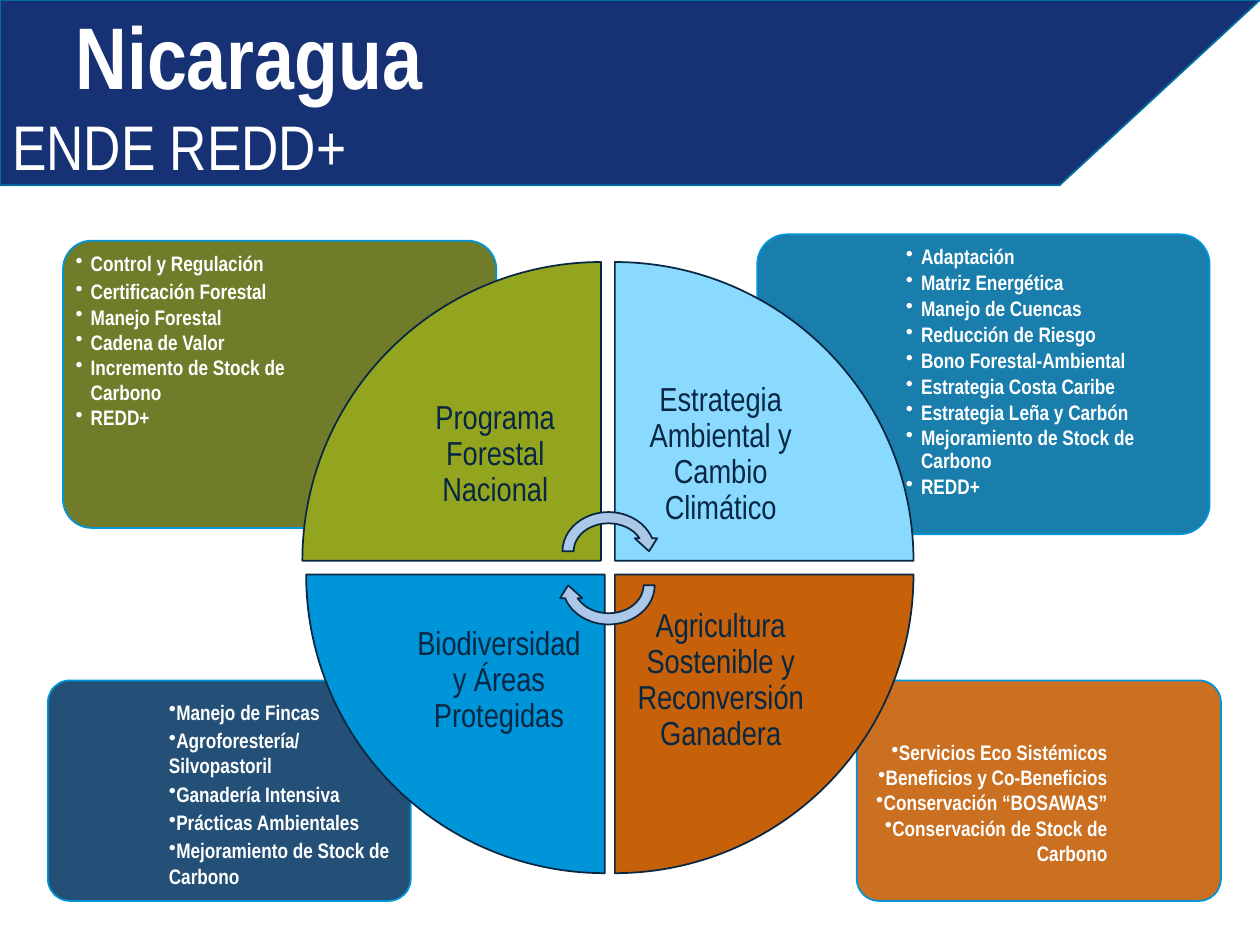
from lxml import etree
from pptx import Presentation
from pptx.dml.color import RGBColor
from pptx.enum.shapes import MSO_SHAPE
from pptx.enum.text import MSO_ANCHOR, PP_ALIGN
from pptx.oxml.ns import qn
from pptx.util import Inches, Pt

ROUND, WEDGE = MSO_SHAPE.ROUNDED_RECTANGLE, MSO_SHAPE.PIE_WEDGE
ARROW = MSO_SHAPE.CIRCULAR_ARROW
TOP, MIDDLE, BOTTOM = MSO_ANCHOR.TOP, MSO_ANCHOR.MIDDLE, MSO_ANCHOR.BOTTOM
LEFT, CENTER, RIGHT = PP_ALIGN.LEFT, PP_ALIGN.CENTER, PP_ALIGN.RIGHT

FONT = "Arial Narrow"
WHITE, NAVY, SKY = "FFFFFF", "082742", "0095D9"
SIDE = 2.37   # wedge side
LABEL = 1.68  # wedge label side

# Panel box, fill, text box, inset, anchor, alignment, hanging indent,
# line spacing of the first and of the other items, space after both, items
PANELS = [
    ((0.38, 5.4, 2.88, 1.75), "0D3E69", (1.29, 5.87, 1.94, 1.23),
     0.05, BOTTOM, LEFT, 0, (1, 1), (1.8, 1.8),
     ["Manejo de Fincas", "Agroforestería/ Silvopastoril",
      "Ganadería Intensiva", "Prácticas Ambientales",
      "Mejoramiento de Stock de Carbono"]),
    ((6.8, 5.4, 2.89, 1.75), "C66009", (6.84, 5.87, 1.95, 1.24),
     0, TOP, RIGHT, 0, (1, 1), (0, 0),
     ["Servicios Eco Sistémicos", "Beneficios y Co-Beneficios",
      "Conservación “BOSAWAS”", "Conservación de Stock de Carbono"]),
    ((6.01, 1.86, 3.59, 2.38), "0070A3", (7.14, 1.91, 2.41, 1.68),
     0.05, TOP, LEFT, 0.12, (0.9, 0.9), (1.8, 1.8),
     ["Adaptación", "Matriz Energética", "Manejo de Cuencas",
      "Reducción de Riesgo", "Bono Forestal-Ambiental",
      "Estrategia Costa Caribe", "Estrategia Leña y Carbón",
      "Mejoramiento de Stock de Carbono", "REDD+"]),
    ((0.5, 1.91, 3.44, 2.28), "626E15", (0.55, 1.96, 2.31, 1.61),
     0.05, TOP, LEFT, 0.12, (0.9, 1), (1.8, 0),
     ["Control y Regulación", "Certificación Forestal", "Manejo Forestal",
      "Cadena de Valor", "Incremento de Stock de Carbono", "REDD+"]),
]

# Left, top, turn, fill, label; clockwise from top left
WEDGES = [
    (2.4, 2.08, 0, "93A41F", "Programa Forestal Nacional"),
    (4.88, 2.08, 90, "8ADAFF", "Estrategia Ambiental y Cambio Climático"),
    (4.88, 4.56, 180, "C66009",
     "Agricultura Sostenible y Reconversión Ganadera"),
    (2.43, 4.56, 270, SKY, "Biodiversidad y Áreas Protegidas"),
]


def color(code):
    return RGBColor.from_string(code)


def paint(shape, fill, line):
    shape.shadow.inherit = False
    shape.fill.solid()
    shape.fill.fore_color.rgb = color(fill)
    shape.line.color.rgb = color(line)
    shape.line.width = Pt(1)


def add_form(slide, kind, box, fill, line, turn=0):
    shape = slide.shapes.add_shape(kind, *map(Inches, box))
    paint(shape, fill, line)
    shape.rotation = turn
    return shape


def fade(shape, share):
    tint = shape.fill._xPr.find(".//" + qn("a:srgbClr"))
    etree.SubElement(tint, qn("a:alpha"), val=str(share * 1000))


def add_text(slide, box, inset, anchor):
    frame = slide.shapes.add_textbox(*map(Inches, box)).text_frame
    frame.word_wrap = True
    frame.vertical_anchor = anchor
    frame.margin_left = frame.margin_right = Inches(inset)
    frame.margin_top = frame.margin_bottom = Inches(inset)
    return frame


def write(para, text, size, code, align, bold=False):
    para.text = text
    para.alignment = align
    font = para.font
    font.name, font.size, font.bold = FONT, Pt(size), bold
    font.color.rgb = color(code)


def indent(para, left, first):
    props = para._p.get_or_add_pPr()
    props.set("marL", str(Inches(left)))
    props.set("indent", str(Inches(first)))
    return props


def bullet(para, hang):
    props = indent(para, hang, -hang)
    mark = etree.Element(qn("a:buChar"), char="•")
    props.find(qn("a:defRPr")).addprevious(mark)


def add_banner(slide):
    pts = [(Inches(x), Inches(y))
           for x, y in [(0, 0), (10, 0), (8.41, 1.47), (0, 1.47)]]
    form = slide.shapes.build_freeform(*pts[0])
    form.add_line_segments(pts[1:], close=True)
    shape = form.convert_to_shape()
    paint(shape, "173274", "006EA1")
    frame = shape.text_frame
    frame.word_wrap = True
    frame.vertical_anchor = MIDDLE
    write(frame.paragraphs[0], "Nicaragua", 50, WHITE, LEFT, True)
    indent(frame.paragraphs[0], 0.5, 0)
    write(frame.add_paragraph(), "ENDE REDD+", 36, WHITE, LEFT)


def add_panel(slide, box, fill, area, inset, anchor, align, hang,
              leads, gaps, items):
    shape = add_form(slide, ROUND, box, fill, SKY)
    shape.adjustments[0] = 0.1
    fade(shape, 90)
    frame = add_text(slide, area, inset, anchor)
    for i, item in enumerate(items):
        para = frame.add_paragraph() if i else frame.paragraphs[0]
        write(para, item, 12, WHITE, align, True)
        para.line_spacing = leads[min(i, 1)]
        para.space_after = Pt(gaps[min(i, 1)])
        bullet(para, hang)


def add_wedge(slide, left, top, turn, fill, label):
    add_form(slide, WEDGE, (left, top, SIDE, SIDE), fill, NAVY, turn)
    # The label sits in the corner nearest the centre of the circle
    x = left + (SIDE - LABEL if turn in (0, 270) else 0)
    y = top + (SIDE - LABEL if turn in (0, 90) else 0)
    frame = add_text(slide, (x, y, LABEL, LABEL), 0.15, MIDDLE)
    write(frame.paragraphs[0], label, 19, NAVY, CENTER)
    frame.paragraphs[0].line_spacing = 0.9


def main():
    deck = Presentation()
    deck.slide_width, deck.slide_height = Inches(10), Inches(7.5)
    slide = deck.slides.add_slide(deck.slide_layouts[6])
    add_banner(slide)
    for panel in PANELS:
        add_panel(slide, *panel)
    for wedge in WEDGES:
        add_wedge(slide, *wedge)
    # Cycle arrows
    for top, turn in [(4.02, 0), (4.29, 180)]:
        add_form(slide, ARROW, (4.42, top, 0.82, 0.71), "ABC8E9", NAVY, turn)
    deck.save("out.pptx")


if __name__ == "__main__":
    main()
